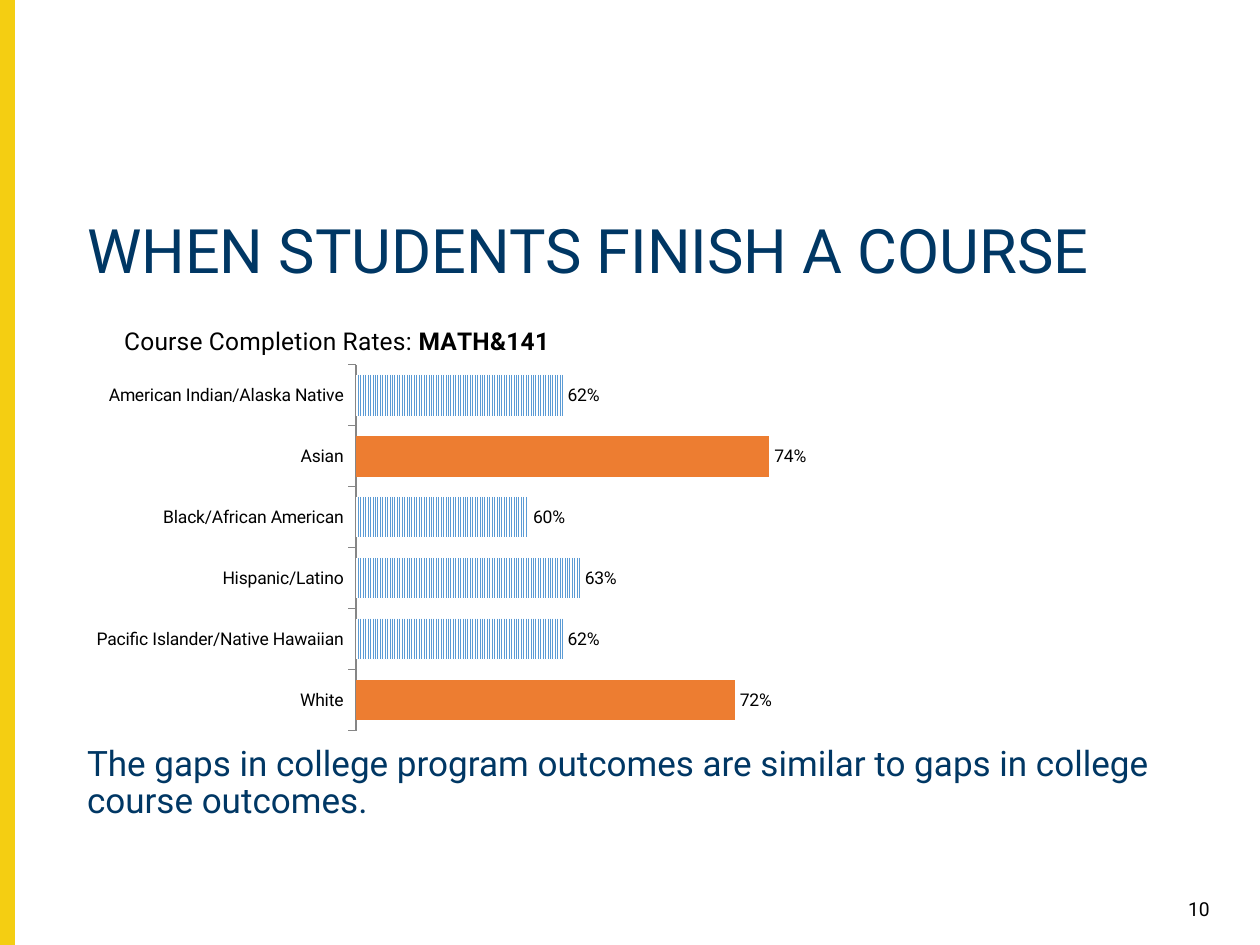
import pptx
import pptx.chart.data
import pptx.dml.color
import pptx.enum.chart
import pptx.enum.dml
import pptx.enum.shapes
import pptx.enum.text
import pptx.oxml
import pptx.oxml.ns
import pptx.util
from pptx.util import Cm

FONT = "Roboto"
NAVY, GOLD, BLACK, WHITE = "003764", "F4CE12", "000000", "FFFFFF"
BLUE, ORANGE, GRAY = "5B9BD5", "ED7D31", "868686"
LEFT, WIDTH = Cm(1.5), Cm(23.16)
RATES = {
    "American Indian/Alaska Native": 0.62,
    "Asian": 0.74,
    "Black/African American": 0.6,
    "Hispanic/Latino": 0.63,
    "Pacific Islander/Native Hawaiian": 0.62,
    "White": 0.72,
}
HIGH = ("Asian", "White")


def color(code):
    return pptx.dml.color.RGBColor.from_string(code)


def style(font, size, code):
    font.name = FONT
    font.size = pptx.util.Pt(size)
    font.color.rgb = color(code)


def place(shape, top, height):
    shape.left, shape.top = LEFT, Cm(top)
    shape.width, shape.height = WIDTH, Cm(height)


def write(shape, text, size, code, align="LEFT"):
    frame = shape.text_frame
    frame.word_wrap = True
    frame.auto_size = pptx.enum.text.MSO_AUTO_SIZE.NONE
    frame.vertical_anchor = pptx.enum.text.MSO_ANCHOR.TOP
    frame.text = text
    para = frame.paragraphs[0]
    props = para._p.get_or_add_pPr()
    props.set("marL", "0")
    props.set("indent", "0")
    props.append(pptx.oxml.parse_xml(
        f"<a:buNone {pptx.oxml.ns.nsdecls('a')}/>"))
    para.alignment = getattr(pptx.enum.text.PP_ALIGN, align)
    para.line_spacing = 0.9
    para.space_before = pptx.util.Pt(0)
    style(para.font, size, code)


def add_bar(slide):
    bar = slide.shapes.add_shape(
        pptx.enum.shapes.MSO_SHAPE.RECTANGLE, 0, 0, Cm(0.28), Cm(19.05))
    bar.shadow.inherit = False
    bar.fill.solid()
    bar.fill.fore_color.rgb = color(GOLD)
    bar.line.color.rgb = color(GOLD)
    bar.line.width = pptx.util.Pt(1)


def set_layout(part, index, target, **sizes):
    for old in part.findall(pptx.oxml.ns.qn("c:layout")):
        part.remove(old)
    inner = f'<c:layoutTarget val="{target}"/>' if target else ""
    modes = "".join(f'<c:{key}Mode val="edge"/>' for key in "xy")
    spans = "".join(f'<c:{key} val="{val}"/>' for key, val in sizes.items())
    part.insert(index, pptx.oxml.parse_xml(
        f"<c:layout {pptx.oxml.ns.nsdecls('c')}><c:manualLayout>"
        f"{inner}{modes}{spans}</c:manualLayout></c:layout>"))


def add_title(chart):
    chart.has_title = True
    title = chart.chart_title
    para = title.text_frame.paragraphs[0]
    for text, bold in (("Course Completion Rates: ", False),
                       ("MATH&141", True)):
        run = para.add_run()
        run.text = text
        run.font.bold = bold
        style(run.font, 14, BLACK)
    title.include_in_layout = False
    set_layout(title._element, 1, "", x=0.04, y=0.05)


def set_axes(chart):
    cat = chart.category_axis
    cat.reverse_order = True
    cat.has_major_gridlines = False
    cat.major_tick_mark = pptx.enum.chart.XL_TICK_MARK.OUTSIDE
    cat.format.line.color.rgb = color(GRAY)
    val = chart.value_axis
    val.minimum_scale, val.maximum_scale = 0.5, 1
    val.has_major_gridlines = False
    val.visible = False


def fill_bars(plot):
    series = plot.series[0]
    for i, name in enumerate(RATES):
        fill = series.points[i].format.fill
        if name in HIGH:
            fill.solid()
            fill.fore_color.rgb = color(ORANGE)
        else:
            fill.patterned()
            fill.pattern = pptx.enum.dml.MSO_PATTERN.NARROW_VERTICAL
            fill.fore_color.rgb = color(BLUE)
            fill.back_color.rgb = color(WHITE)


def add_rates(slide):
    data = pptx.chart.data.CategoryChartData(number_format="0%")
    data.categories = list(RATES)
    data.add_series("Series 1", list(RATES.values()))
    chart = slide.shapes.add_chart(
        pptx.enum.chart.XL_CHART_TYPE.BAR_CLUSTERED,
        LEFT, Cm(6.02), WIDTH, Cm(8.89), data).chart
    chart.has_legend = False
    style(chart.font, 10, BLACK)
    add_title(chart)
    set_axes(chart)
    plot = chart.plots[0]
    plot.gap_width = 50
    plot.vary_by_categories = False
    plot.has_data_labels = True
    labels = plot.data_labels
    labels.show_value = True
    labels.number_format = "0%"
    labels.number_format_is_linked = False
    labels.position = pptx.enum.chart.XL_LABEL_POSITION.OUTSIDE_END
    style(labels.font, 10, BLACK)
    fill_bars(plot)
    area = chart._chartSpace.chart.plotArea
    set_layout(area, 0, "inner", x=0.245, y=0.15, w=0.75, h=0.83)


def main():
    deck = pptx.Presentation()
    deck.slide_width, deck.slide_height = Cm(25.4), Cm(19.05)
    slide = deck.slides.add_slide(deck.slide_layouts[1])
    add_bar(slide)
    title, body = slide.shapes.title, slide.placeholders[1]
    place(title, 4.32, 2.21)
    write(title, "WHEN STUDENTS FINISH A COURSE", 35, NAVY)
    add_rates(slide)
    place(body, 14.91, 2.67)
    write(body, "The gaps in college program outcomes are similar to gaps "
          "in college course outcomes.", 20, NAVY)
    page = slide.shapes.add_textbox(Cm(23.34), Cm(18.01), Cm(1.3), Cm(0.66))
    write(page, "10", 11, BLACK, "RIGHT")
    deck.save("out.pptx")


if __name__ == "__main__":
    main()
